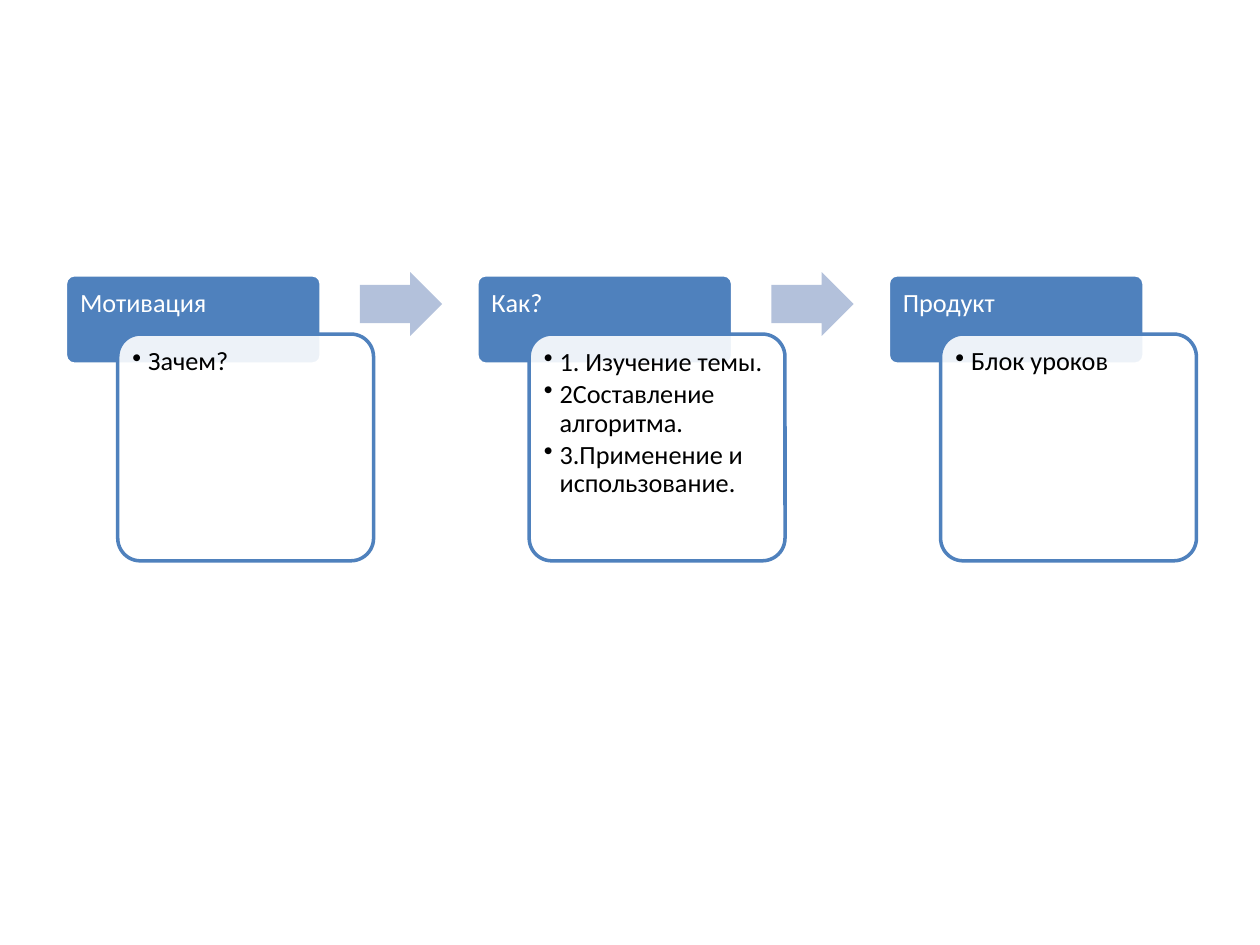
from lxml import etree
from pptx import Presentation
from pptx.dml.color import RGBColor
from pptx.enum import shapes, text
from pptx.oxml.ns import qn
from pptx.util import Pt

COLORS = {"blue": "4F81BD", "pale": "B3C1DB", "white": "FFFFFF", "black": "000000"}
FONT, SIZE, INSET = "Calibri", 15, 8.4
LEFT, TOP, PITCH = 37.4, 157, 235.1
WIDTH, HEAD, BODY = 146.2, 51.1, 129.6
SHIFT, DROP = 29.9, 33.9
STEPS = [
    ("Мотивация", ["Зачем?"]),
    ("Как?", ["1. Изучение темы.", "2Составление алгоритма.",
              "3.Применение и использование."]),
    ("Продукт", ["Блок уроков"]),
]


def color(name):
    return RGBColor.from_string(COLORS[name])


def add_form(slide, kind, box, fill, line=None, alpha=None):
    form = slide.shapes.add_shape(kind, *map(Pt, box))
    form.shadow.inherit = False
    form.fill.solid()
    form.fill.fore_color.rgb = color(fill)
    if alpha:
        tint = form.fill._xPr.find(".//" + qn("a:srgbClr"))
        etree.SubElement(tint, qn("a:alpha")).set("val", str(alpha * 1000))
    if line:
        form.line.color.rgb = color(line)
        form.line.width = Pt(2)
    else:
        form.line.fill.background()
    return form


def add_card(slide, box, fill, line, alpha=None):
    card = add_form(slide, shapes.MSO_SHAPE.ROUNDED_RECTANGLE, box, fill, line, alpha)
    card.adjustments[0] = 0.1


def set_bullet(para):
    para.level = 1
    props = para._p.get_or_add_pPr()
    props.set("marL", str(Pt(9)))
    props.set("indent", str(Pt(-9)))
    etree.SubElement(props, qn("a:buChar")).set("char", "•")


def add_words(slide, box, lines, tone, after, bottom=INSET, bullets=False):
    frame = slide.shapes.add_textbox(*map(Pt, box)).text_frame
    frame.word_wrap = True
    frame.vertical_anchor = text.MSO_ANCHOR.TOP
    frame.margin_left = frame.margin_right = frame.margin_top = Pt(INSET)
    frame.margin_bottom = Pt(bottom)
    frame.text = "\n".join(lines)
    for para in frame.paragraphs:
        para.line_spacing = 0.9
        para.space_after = Pt(after)
        if bullets:
            set_bullet(para)
        para.font.name = FONT
        para.font.size = Pt(SIZE)
        para.font.color.rgb = color(tone)


def add_step(slide, left, top, title, items):
    """Place a heading card and the list card that overlaps it."""
    add_card(slide, (left, top, WIDTH, HEAD), "blue", "white")
    add_words(slide, (left, top, WIDTH, DROP), [title], "white", 5.25, bottom=4.5)
    body = (left + SHIFT, top + DROP, WIDTH, BODY)
    add_card(slide, body, "white", "blue", alpha=90)
    add_words(slide, body, items, "black", 2.25, bullets=True)


def add_arrow(slide, left, top):
    arrow = add_form(slide, shapes.MSO_SHAPE.RIGHT_ARROW, (left, top, 47, 36.5), "pale")
    arrow.adjustments[0] = 0.6
    arrow.adjustments[1] = 0.5


def main():
    deck = Presentation()
    deck.slide_width, deck.slide_height = Pt(720), Pt(540)
    slide = deck.slides.add_slide(deck.slide_layouts[6])
    for i, (title, items) in enumerate(STEPS):
        left = LEFT + i * PITCH
        add_step(slide, left, TOP, title, items)
        if i < len(STEPS) - 1:
            add_arrow(slide, left + 168.3, TOP - 1.5)
    deck.save("out.pptx")


if __name__ == "__main__":
    main()
